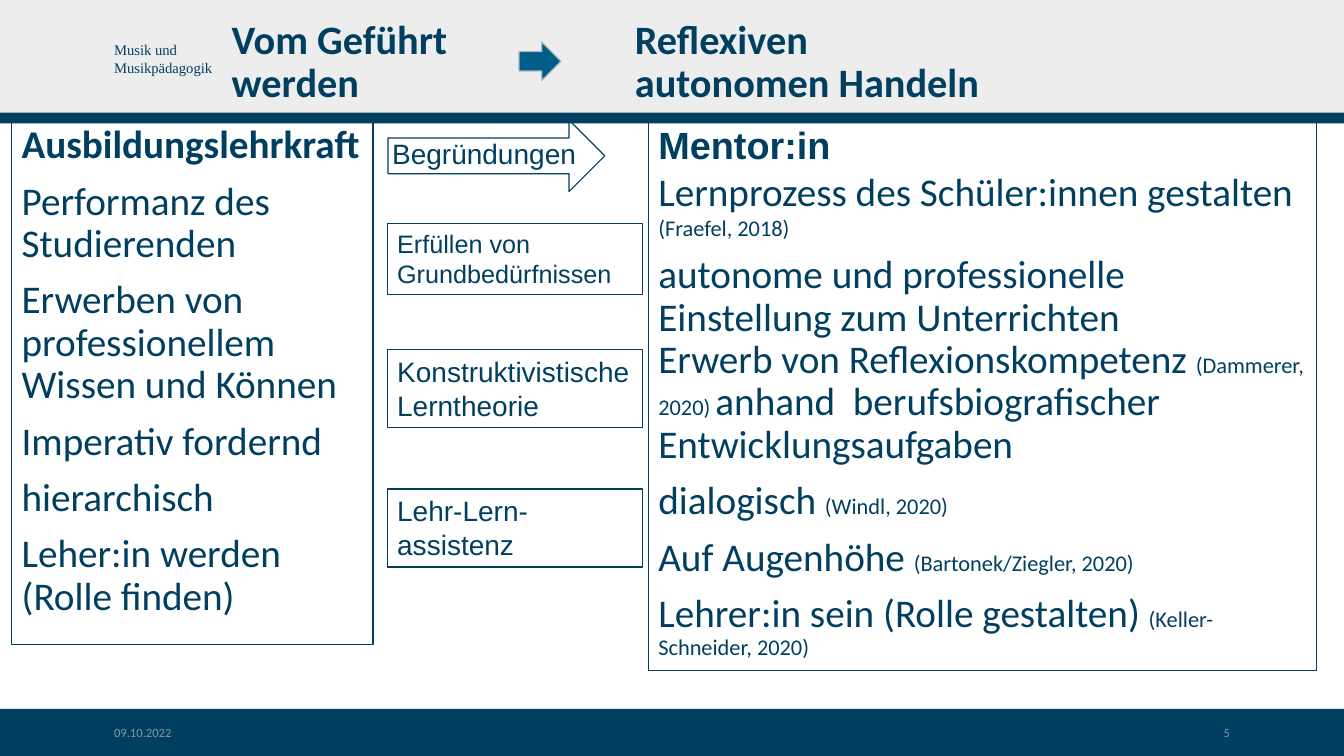
from dataclasses import dataclass
from typing import Optional

from pptx import Presentation
from pptx import util as u
from pptx.dml.color import RGBColor
from pptx.enum import shapes, text
from pptx.oxml import parse_xml
from pptx.oxml.ns import nsdecls

NAVY = RGBColor(0x00, 0x3F, 0x60)
BLUE = RGBColor(0x00, 0x5D, 0x87)
SILVER = RGBColor(0xAE, 0xB8, 0xBD)
GREY = RGBColor(0x8C, 0x93, 0x9D)
PALE = RGBColor(0xED, 0xED, 0xED)

# Grid of 160 columns by 90 rows
CELL = u.Inches(7.5) / 90
COLS, ROWS = 160, 90
RECT = shapes.MSO_SHAPE.RECTANGLE
ARROW = shapes.MSO_SHAPE.RIGHT_ARROW
LEFT, RIGHT = text.PP_ALIGN.LEFT, text.PP_ALIGN.RIGHT
TOP, MID = text.MSO_ANCHOR.TOP, text.MSO_ANCHOR.MIDDLE
BREAK = "\n"


@dataclass
class Area:
    x: float
    y: float
    w: float
    h: float


@dataclass
class Run:
    text: str
    size: float = 28
    font: str = "Calibri"
    bold: bool = False
    color: RGBColor = NAVY


@dataclass
class Para:
    runs: list[Run]
    space: float = 0
    pitch: Optional[float] = None
    align: text.PP_ALIGN = LEFT
    stop: float = 0


@dataclass
class Block:
    """A preset shape, or a plain text box when kind is None."""
    area: Area
    kind: Optional[shapes.MSO_SHAPE] = None
    fill: Optional[RGBColor] = None
    line: Optional[RGBColor] = None
    width: float = 1
    paras: tuple[Para, ...] = ()
    anchor: text.MSO_ANCHOR = TOP


def span(cells: float) -> int:
    """Length of a number of grid cells."""
    return round(cells * CELL)


def write(para, item: Para) -> None:
    if item.stop:
        para._p.get_or_add_pPr().append(parse_xml(
            f'<a:tabLst {nsdecls("a")}><a:tab pos="{span(item.stop)}" algn="l"/></a:tabLst>'))
    para.alignment = item.align
    para.space_before = u.Pt(item.space)
    if item.pitch:
        para.line_spacing = item.pitch
    for part in item.runs:
        if part.text == BREAK:
            para.add_line_break()
            continue
        run = para.add_run()
        run.text = part.text
        run.font.size = u.Pt(part.size)
        run.font.name = part.font
        run.font.bold = part.bold
        run.font.color.rgb = part.color


def draw(slide, block: Block) -> None:
    area = block.area
    place = [span(v) for v in (area.x, area.y, area.w, area.h)]
    if block.kind is None:
        shape = slide.shapes.add_textbox(*place)
    else:
        shape = slide.shapes.add_shape(block.kind, *place)
        shape.shadow.inherit = False
        if block.fill is None:
            shape.fill.background()
        else:
            shape.fill.solid()
            shape.fill.fore_color.rgb = block.fill
        if block.line is None:
            shape.line.fill.background()
        else:
            shape.line.color.rgb = block.line
            shape.line.width = u.Pt(block.width)
    frame = shape.text_frame
    frame.word_wrap = True
    frame.vertical_anchor = block.anchor
    for i, item in enumerate(block.paras):
        write(frame.paragraphs[0] if i == 0 else frame.add_paragraph(), item)


def bar(y: float, h: float, fill: RGBColor) -> Block:
    return Block(Area(0, y, COLS, h), RECT, fill)


def item(*runs: Run) -> Para:
    return Para(list(runs), 10, 0.9)


def cite(words: str) -> Run:
    return Run(words, 16)


def note(y: float, h: float, words: str, size: float, width: float) -> Block:
    return Block(Area(46.1, y, 30.4, h), RECT, None, NAVY, width,
                 (Para([Run(words, size, "Arial")]),))


def foot(x: float, words: str, align: text.PP_ALIGN) -> Block:
    return Block(Area(x, 85.8, 36, 2.9), anchor=MID,
                 paras=(Para([Run(words, 9, color=GREY)], align=align),))


DEPT = tuple(Para([Run(line, 10.5, "Times New Roman")])
             for line in ("Musik und", "Musikpädagogik"))
TITLE = Para([Run("Vom Geführt\tReflexiven", 28.8, bold=True), Run(BREAK),
              Run("werden\tautonomen Handeln", 28.8, bold=True)], pitch=0.9, stop=48)
TRAINER = (
    Para([Run("Ausbildungslehrkraft", bold=True)], pitch=0.9),
    *(item(Run(words)) for words in (
        "Performanz des Studierenden",
        "Erwerben von professionellem Wissen und Können",
        "Imperativ fordernd",
        "hierarchisch",
        "Leher:in werden (Rolle finden)")),
)
MENTOR = (
    Para([Run("Mentor:in", 27, "Arial", True)]),
    Para([Run("Lernprozess des Schüler:innen gestalten "), cite("(Fraefel, 2018)")]),
    item(Run("autonome und professionelle Einstellung zum Unterrichten"), Run(BREAK),
         Run("Erwerb von Reflexionskompetenz "), cite("(Dammerer, 2020) "),
         Run("anhand  berufsbiografischer Entwicklungsaufgaben")),
    item(Run("dialogisch "), cite("(Windl, 2020)")),
    item(Run("Auf Augenhöhe "), cite("(Bartonek/Ziegler, 2020)")),
    item(Run("Lehrer:in sein (Rolle gestalten) "), cite("(Keller-Schneider, 2020)")),
)

BLOCKS = (
    bar(84.4, 5.6, NAVY),
    bar(0, 13.5, PALE),
    Block(Area(12.4, 4.3, 24.4, 5.4), paras=DEPT),
    bar(13.4, 1.3, NAVY),
    Block(Area(26.4, 2.3, 130.2, 10.4), paras=(TITLE,), anchor=MID),
    foot(12.4, "09.10.2022", LEFT),
    foot(111.6, "5", RIGHT),
    Block(Area(1.4, 14.3, 43, 62.4), RECT, None, NAVY, 1, TRAINER),
    Block(Area(77.2, 13.9, 79.5, 65.9), RECT, None, NAVY, 1, MENTOR),
    note(41.6, 9.3, "Konstruktivistische Lerntheorie", 20, 1),
    Block(Area(61.8, 5, 5, 4.6), ARROW, BLUE, SILVER, 0.85),
    note(26.6, 8.5, "Erfüllen von Grundbedürfnissen", 18, 0.75),
    Block(Area(45.5, 15.7, 27.4, 5.3), paras=(Para([Run("Begründungen", 20, "Arial")]),)),
    Block(Area(46.2, 14.3, 25.8, 8.5), ARROW, None, NAVY, 0.85),
    note(58.2, 9.3, "Lehr-Lern-assistenz", 20, 1),
)


def main() -> None:
    deck = Presentation()
    deck.slide_width, deck.slide_height = span(COLS), span(ROWS)
    slide = deck.slides.add_slide(deck.slide_layouts[6])
    for block in BLOCKS:
        draw(slide, block)
    deck.save("out.pptx")


if __name__ == "__main__":
    main()
